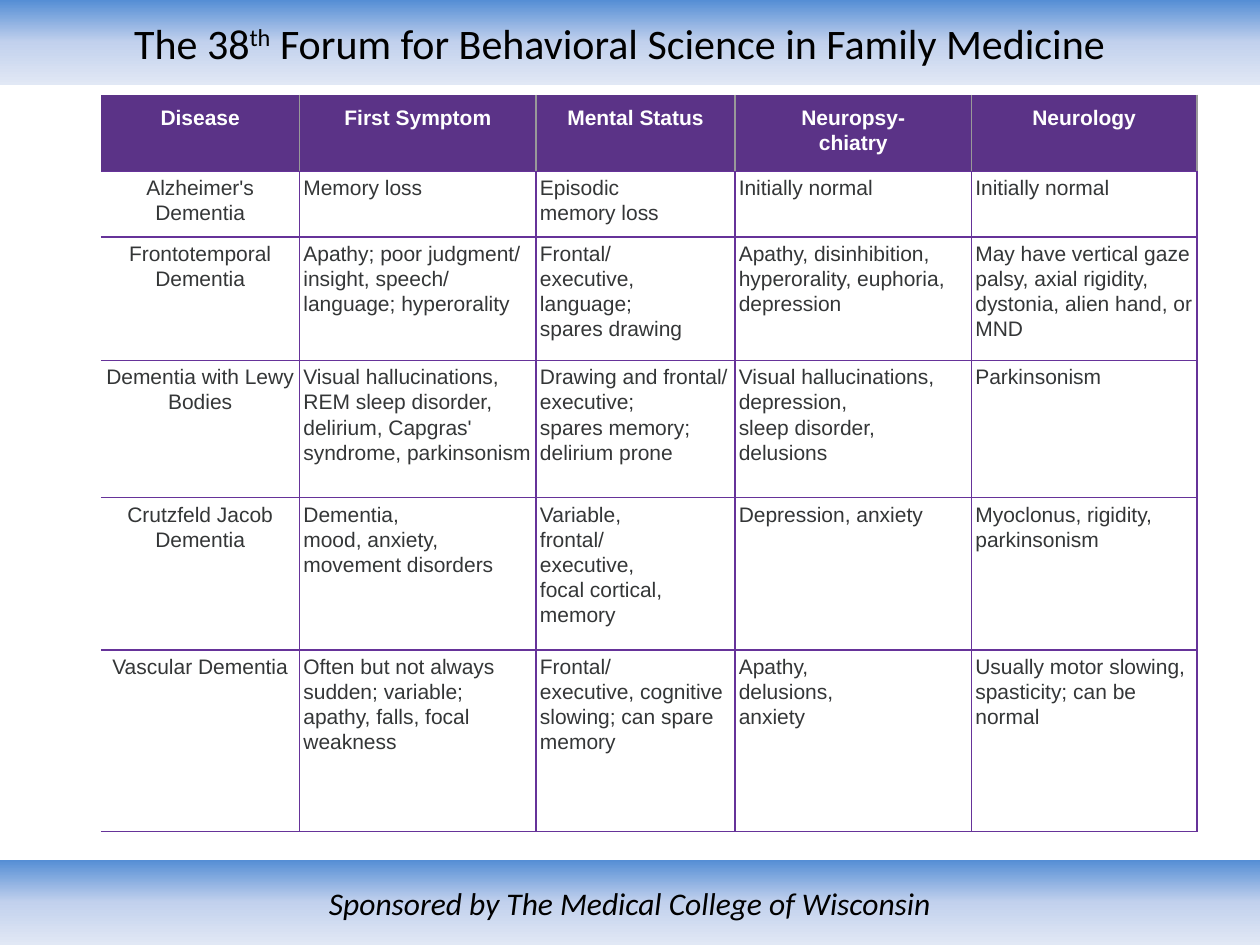
from copy import deepcopy
from dataclasses import dataclass

from lxml import etree
from pptx import Presentation
from pptx.dml.color import RGBColor
from pptx.enum.shapes import MSO_SHAPE
from pptx.enum.text import MSO_ANCHOR, PP_ALIGN
from pptx.oxml.ns import qn
from pptx.util import Inches, Pt

RECTANGLE = MSO_SHAPE.RECTANGLE
MIDDLE, TOP = MSO_ANCHOR.MIDDLE, MSO_ANCHOR.TOP
CENTER, LEFT = PP_ALIGN.CENTER, PP_ALIGN.LEFT
SLIDE_WIDTH, SLIDE_HEIGHT = Inches(10), Inches(7.5)


@dataclass(frozen=True)
class Theme:
    """Colours, fonts and type sizes of the slide."""
    band_stops: tuple = ((0, "558ED5"), (0.5, "C2D1ED"), (1, "E1E8F5"))
    band_ink: str = "000000"
    header_fill: str = "5B3387"
    header_ink: str = "FFFFFF"
    header_rule: str = "999999"
    body_fill: str = "FFFFFF"
    body_ink: str = "343637"
    body_rule: str = "663399"
    band_font: str = "Calibri"
    table_font: str = "Arial"
    title_size: int = 24
    sponsor_size: int = 18
    table_size: int = 12
    rule_width: int = 1
    line_spacing: float = 1.07


@dataclass(frozen=True)
class Box:
    """A region given as shares of the slide's size."""
    left: float
    top: float
    width: float
    height: float

    def place(self):
        """Return left, top, width and height in slide units."""
        return (int(self.left * SLIDE_WIDTH), int(self.top * SLIDE_HEIGHT),
                int(self.width * SLIDE_WIDTH), int(self.height * SLIDE_HEIGHT))


THEME = Theme()
HEADER_BOX = Box(0, 0, 1, 0.09)
TABLE_BOX = Box(0.08, 0.1, 0.87, 0.78)
FOOTER_BOX = Box(0, 0.91, 1, 0.09)
COLUMN_WEIGHTS = (1.58, 1.88, 1.58, 1.88, 1.79)
ROW_WEIGHTS = (0.61, 0.52, 0.98, 1.09, 1.21, 1.44)
TITLE = (("The 38", False), ("th", True),
         (" Forum for Behavioral Science in Family Medicine", False))
SPONSOR = (("Sponsored by The Medical College of Wisconsin", False),)
DISEASES = (
    ("Disease", "First Symptom", "Mental Status", "Neuropsy-\nchiatry", "Neurology"),
    ("Alzheimer's Dementia", "Memory loss", "Episodic\nmemory loss",
     "Initially normal", "Initially normal"),
    ("Frontotemporal Dementia",
     "Apathy; poor judgment/\ninsight, speech/\nlanguage; hyperorality",
     "Frontal/\nexecutive,\nlanguage;\nspares drawing",
     "Apathy, disinhibition, hyperorality, euphoria, depression",
     "May have vertical gaze palsy, axial rigidity, dystonia, alien hand, or MND"),
    ("Dementia with Lewy Bodies",
     "Visual hallucinations, REM sleep disorder,\ndelirium, Capgras' syndrome, parkinsonism",
     "Drawing and frontal/\nexecutive;\nspares memory; delirium prone",
     "Visual hallucinations, depression,\nsleep disorder, delusions",
     "Parkinsonism"),
    ("Crutzfeld Jacob Dementia", "Dementia,\nmood, anxiety, movement disorders",
     "Variable,\nfrontal/\nexecutive,\nfocal cortical, memory",
     "Depression, anxiety", "Myoclonus, rigidity, parkinsonism"),
    ("Vascular Dementia",
     "Often but not always sudden; variable; apathy, falls, focal weakness",
     "Frontal/\nexecutive, cognitive\nslowing; can spare memory",
     "Apathy,\ndelusions,\nanxiety",
     "Usually motor slowing, spasticity; can be normal"),
)


def style_run(run, font_name, size, ink, bold=False, italic=False):
    """Give a run its typeface, size, colour and emphasis."""
    run.font.name = font_name
    run.font.size = Pt(size)
    run.font.color.rgb = RGBColor.from_string(ink)
    run.font.bold = bold
    run.font.italic = italic


def fill_band(fill):
    """Fill a band with the vertical three-stop gradient."""
    fill.gradient()
    fill.gradient_angle = 270
    first_stop = fill.gradient_stops[0]._gs
    first_stop.addnext(deepcopy(first_stop))
    for stop, (position, colour) in zip(fill.gradient_stops, THEME.band_stops):
        stop.position = position
        stop.color.rgb = RGBColor.from_string(colour)


def add_band(slide, box, pieces, size, italic=False, right_inset=0.1):
    """Add a gradient band with a centred line of text in the box."""
    band = slide.shapes.add_shape(RECTANGLE, *box.place())
    band.shadow.inherit = False
    band.line.fill.background()
    fill_band(band.fill)
    frame = band.text_frame
    frame.word_wrap = True
    frame.vertical_anchor = MIDDLE
    frame.margin_right = Inches(right_inset)
    line = frame.paragraphs[0]
    line.alignment = CENTER
    for words, raised in pieces:
        run = line.add_run()
        run.text = words
        style_run(run, THEME.band_font, size, THEME.band_ink, italic=italic)
        if raised:
            run._r.get_or_add_rPr().set("baseline", "30000")


def rule_cell(cell, colours):
    """Draw the cell's left, right, top and bottom rules; None leaves one out."""
    properties = cell._tc.get_or_add_tcPr()
    for side, colour in zip("LRTB", colours):
        rule = etree.SubElement(properties, qn(f"a:ln{side}"), w=str(Pt(THEME.rule_width)))
        if colour:
            solid = etree.SubElement(rule, qn("a:solidFill"))
            etree.SubElement(solid, qn("a:srgbClr"), val=colour)
        else:
            etree.SubElement(rule, qn("a:noFill"))


def write_cell(cell, words, is_header, is_first):
    """Write and format one cell of the disease table."""
    side_rule = THEME.header_rule if is_header else THEME.body_rule
    rule_cell(cell, (None if is_first else side_rule, side_rule,
                     None if is_header else THEME.body_rule, THEME.body_rule))
    cell.fill.solid()
    cell.fill.fore_color.rgb = RGBColor.from_string(
        THEME.header_fill if is_header else THEME.body_fill)
    cell.margin_left = cell.margin_right = Inches(0.03)
    cell.margin_top = cell.margin_bottom = Inches(0.08 if is_header else 0.03)
    cell.vertical_anchor = TOP
    entry = cell.text_frame.paragraphs[0]
    entry.text = words
    entry.alignment = CENTER if is_header or is_first else LEFT
    entry.line_spacing = THEME.line_spacing
    for run in entry.runs:
        style_run(run, THEME.table_font, THEME.table_size,
                  THEME.header_ink if is_header else THEME.body_ink, bold=is_header)
    for line_break in entry._p.findall(qn("a:br")):
        etree.SubElement(line_break, qn("a:rPr"), sz=str(THEME.table_size * 100))


def add_disease_table(slide, box):
    """Add the table of dementias, sharing the box out by weights."""
    left, top, width, height = box.place()
    table = slide.shapes.add_table(len(ROW_WEIGHTS), len(COLUMN_WEIGHTS),
                                   left, top, width, height).table
    table.horz_banding = False
    for column, weight in zip(table.columns, COLUMN_WEIGHTS):
        column.width = int(width * weight / sum(COLUMN_WEIGHTS))
    for row, weight in zip(table.rows, ROW_WEIGHTS):
        row.height = int(height * weight / sum(ROW_WEIGHTS))
    for row_index, disease in enumerate(DISEASES):
        for column_index, words in enumerate(disease):
            write_cell(table.cell(row_index, column_index), words,
                       row_index == 0, column_index == 0)


def main():
    """Build the slide and save it."""
    deck = Presentation()
    deck.slide_width, deck.slide_height = SLIDE_WIDTH, SLIDE_HEIGHT
    slide = deck.slides.add_slide(deck.slide_layouts[6])
    add_band(slide, HEADER_BOX, TITLE, THEME.title_size, right_inset=0.26)
    add_band(slide, FOOTER_BOX, SPONSOR, THEME.sponsor_size, italic=True)
    add_disease_table(slide, TABLE_BOX)
    deck.save("out.pptx")


if __name__ == "__main__":
    main()
